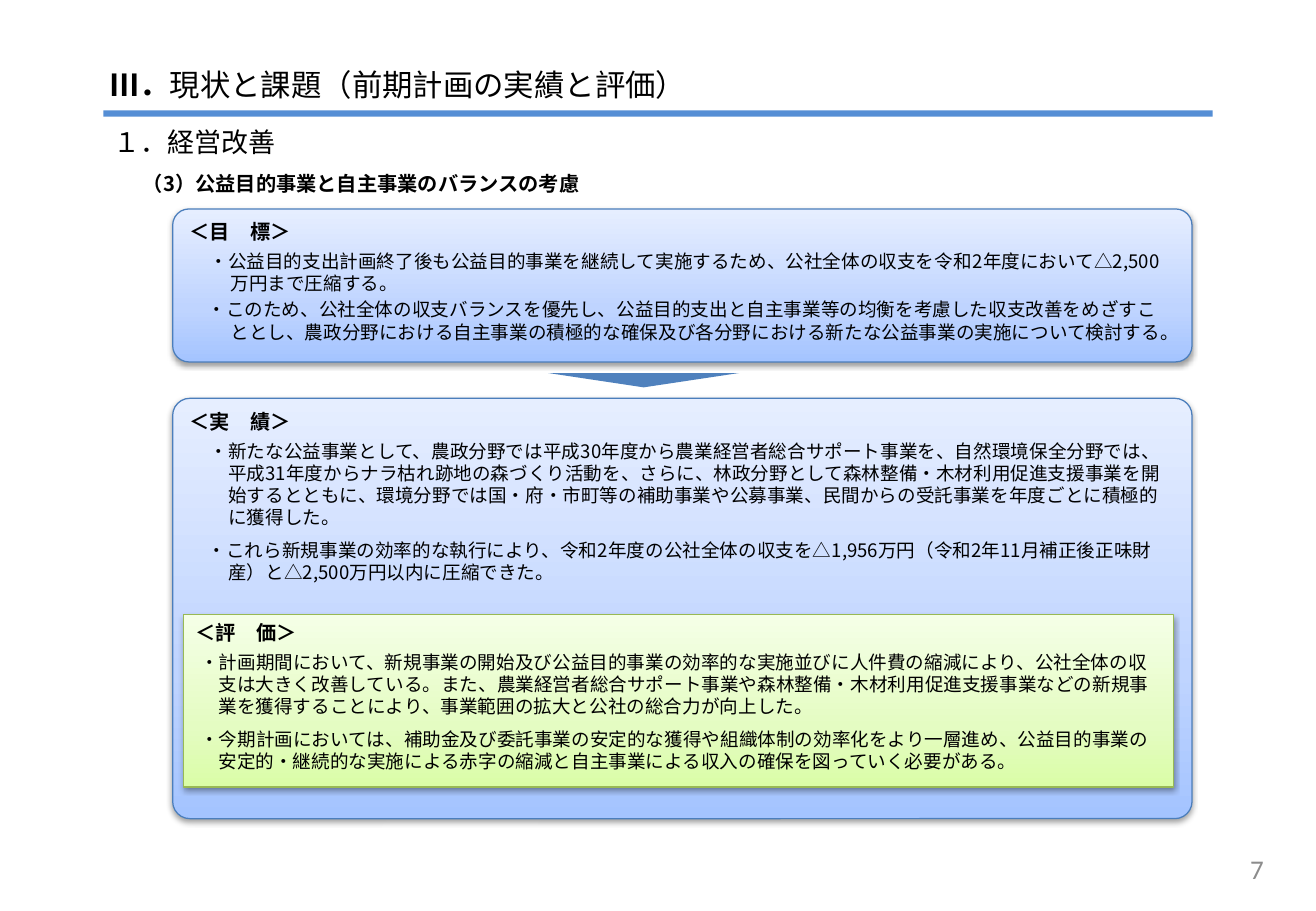
import copy
import pptx
import pptx.dml.color
import pptx.enum.shapes
import pptx.enum.text
import pptx.oxml
import pptx.oxml.ns
import pptx.util

Cm, Pt = pptx.util.Cm, pptx.util.Pt
RGBColor = pptx.dml.color.RGBColor
MSO_SHAPE = pptx.enum.shapes.MSO_SHAPE
MSO_ANCHOR = pptx.enum.text.MSO_ANCHOR
PP_ALIGN = pptx.enum.text.PP_ALIGN
qn = pptx.oxml.ns.qn

BLACK = RGBColor(0x00, 0x00, 0x00)
GRAY = RGBColor(0x8C, 0x8C, 0x8C)
RULE_BLUE = RGBColor(0x55, 0x8E, 0xD5)
ARROW_BLUE = RGBColor(0x4F, 0x81, 0xBD)
BLUE_LINE = RGBColor(0x4B, 0x7E, 0xBC)
GREEN_LINE = RGBColor(0x98, 0xB9, 0x55)
BLUE_STOPS = [RGBColor(0xA4, 0xC4, 0xFF), RGBColor(0xBF, 0xD4, 0xFF), RGBColor(0xE6, 0xEE, 0xFF)]
GREEN_STOPS = [RGBColor(0xDA, 0xFD, 0xA7), RGBColor(0xE4, 0xFC, 0xC2), RGBColor(0xF5, 0xFF, 0xE7)]
SHADOW = (
    '<a:effectLst xmlns:a="http://schemas.openxmlformats.org/drawingml/2006/main">'
    '<a:outerShdw blurRad="40000" dist="20000" dir="5400000" rotWithShape="0">'
    '<a:srgbClr val="000000"><a:alpha val="38000"/></a:srgbClr>'
    '</a:outerShdw></a:effectLst>'
)


def add_text(p, text, size=11, bold=False, font="Noto Sans CJK JP", color=BLACK,
             align=PP_ALIGN.LEFT, before=0, left=0, hang=0):
    """Add a run to paragraph p and format both."""
    p.alignment = align
    p.space_before = Pt(before)
    pPr = p._p.get_or_add_pPr()
    pPr.set("marL", str(Cm(left)))
    pPr.set("indent", str(-Cm(hang)))
    r = p.add_run()
    r.text = text
    r.font.size, r.font.bold, r.font.name = Pt(size), bold, font
    r.font.color.rgb = color
    ea = pptx.oxml.parse_xml(
        '<a:ea xmlns:a="http://schemas.openxmlformats.org/drawingml/2006/main" typeface="%s"/>' % font)
    r._r.rPr.find(qn("a:latin")).addnext(ea)


prs = pptx.Presentation()
prs.slide_width, prs.slide_height = Cm(27.51), Cm(19.05)
s = prs.slides.add_slide(prs.slide_layouts[6])

# Headings and page number
labels = [
    ((2.03, 1.07, 13.41, 1.37), MSO_ANCHOR.MIDDLE,
     [("Ⅲ．", dict(size=18, bold=True)), ("現状と課題（前期計画の実績と評価）", dict(size=18))]),
    ((2.13, 2.51, 10.3, 0.94), MSO_ANCHOR.TOP, [("１．経営改善", dict(size=16))]),
    ((2.74, 3.45, 13.28, 0.76), MSO_ANCHOR.TOP,
     [("（3）公益目的事業と自主事業のバランスの考慮", dict(size=12, bold=True))]),
    ((20.24, 17.65, 6.43, 1.02), MSO_ANCHOR.MIDDLE,
     [("7", dict(size=16, font="Calibri", color=GRAY, align=PP_ALIGN.RIGHT))]),
]
for box, anchor, runs in labels:
    tf = s.shapes.add_textbox(*map(Cm, box)).text_frame
    tf.word_wrap = True
    tf.vertical_anchor = anchor
    for text, look in runs:
        add_text(tf.paragraphs[0], text, **look)

# Title rule and the arrow from target to result
for kind, box, color, turn in [
    (MSO_SHAPE.RECTANGLE, (2.16, 2.31, 23.19, 0.13), RULE_BLUE, 0),
    (MSO_SHAPE.ISOSCELES_TRIANGLE, (11.46, 7.8, 3.99, 0.3), ARROW_BLUE, 180),
]:
    sp = s.shapes.add_shape(kind, *map(Cm, box))
    sp.shadow.inherit = False
    sp.fill.solid()
    sp.fill.fore_color.rgb = color
    sp.line.fill.background()
    sp.rotation = turn

# Panels: box, corner, stops, line, heading, items of (text, space before, left, hang)
panels = [
    ((3.61, 4.37, 21.31, 3.2), 0.107, BLUE_STOPS, BLUE_LINE, "＜目　標＞", [
        ("・公益目的支出計画終了後も公益目的事業を継続して実施するため、公社全体の収支を令和2年度において△2,500万円まで圧縮する。",
         3.5, 0.86, 0.44),
        ("・このため、公社全体の収支バランスを優先し、公益目的支出と自主事業等の均衡を考慮した収支改善をめざすこととし、"
         "農政分野における自主事業の積極的な確保及び各分野における新たな公益事業の実施について検討する。",
         2.2, 0.86, 0.48),
    ]),
    ((3.61, 8.33, 21.31, 8.79), 0.041, BLUE_STOPS, BLUE_LINE, "＜実　績＞", [
        ("・新たな公益事業として、農政分野では平成30年度から農業経営者総合サポート事業を、自然環境保全分野では、"
         "平成31年度からナラ枯れ跡地の森づくり活動を、さらに、林政分野として森林整備・木材利用促進支援事業を開始するとともに、"
         "環境分野では国・府・市町等の補助事業や公募事業、民間からの受託事業を年度ごとに積極的に獲得した。",
         3.5, 0.81, 0.39),
        ("・これら新規事業の効率的な執行により、令和2年度の公社全体の収支を△1,956万円（令和2年11月補正後正味財産）と"
         "△2,500万円以内に圧縮できた。", 6, 0.81, 0.43),
    ]),
    ((3.84, 12.85, 20.7, 3.61), None, GREEN_STOPS, GREEN_LINE, "＜評　価＞", [
        ("・計画期間において、新規事業の開始及び公益目的事業の効率的な実施並びに人件費の縮減により、公社全体の収支は大きく改善している。"
         "また、農業経営者総合サポート事業や森林整備・木材利用促進支援事業などの新規事業を獲得することにより、"
         "事業範囲の拡大と公社の総合力が向上した。", 3.5, 0.48, 0.38),
        ("・今期計画においては、補助金及び委託事業の安定的な獲得や組織体制の効率化をより一層進め、公益目的事業の"
         "安定的・継続的な実施による赤字の縮減と自主事業による収入の確保を図っていく必要がある。", 6, 0.48, 0.38),
    ]),
]
for box, corner, stops, line, heading, items in panels:
    kind = MSO_SHAPE.ROUNDED_RECTANGLE if corner else MSO_SHAPE.RECTANGLE
    sp = s.shapes.add_shape(kind, *map(Cm, box))
    if corner:
        sp.adjustments[0] = corner
    sp.line.color.rgb = line
    sp.line.width = Pt(0.75)

    # Three-stop gradient, darkest at the bottom
    sp.fill.gradient()
    sp.fill.gradient_angle = 90
    first = sp._element.spPr.find(".//" + qn("a:gs"))
    first.addnext(copy.deepcopy(first))
    for stop, position, color in zip(sp.fill.gradient_stops, (0, 0.35, 1), stops):
        stop.position = position
        stop.color.rgb = color
    sp._element.spPr.append(pptx.oxml.parse_xml(SHADOW))

    tf = sp.text_frame
    tf.word_wrap = True
    tf.vertical_anchor = MSO_ANCHOR.TOP
    add_text(tf.paragraphs[0], heading, size=12, bold=True)
    for text, before, left, hang in items:
        add_text(tf.add_paragraph(), text, before=before, left=left, hang=hang)

prs.save("out.pptx")
